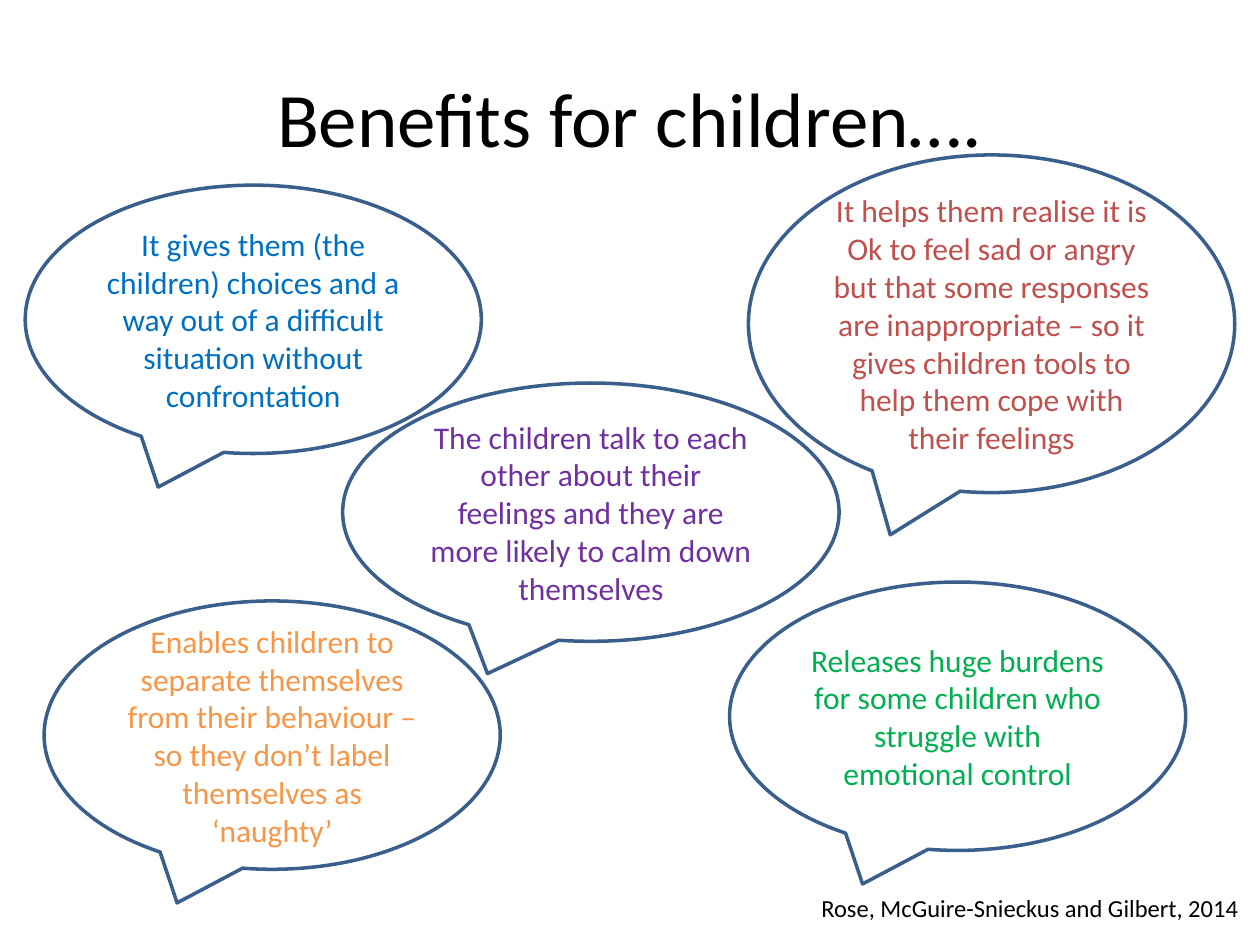
import pptx
import pptx.dml.color
import pptx.enum.shapes
import pptx.enum.text
import pptx.util
from pptx.util import Inches

RGBColor = pptx.dml.color.RGBColor
BLACK = RGBColor(0x00, 0x00, 0x00)
OUTLINE = RGBColor(0x3A, 0x5F, 0x8C)
ORANGE = RGBColor(0xF7, 0x96, 0x46)
RED = RGBColor(0xC0, 0x50, 0x4D)
BLUE = RGBColor(0x00, 0x70, 0xC0)
PURPLE = RGBColor(0x70, 0x30, 0xA0)
GREEN = RGBColor(0x00, 0xB0, 0x50)

CENTER = pptx.enum.text.PP_ALIGN.CENTER
LEFT = pptx.enum.text.PP_ALIGN.LEFT
MIDDLE = pptx.enum.text.MSO_ANCHOR.MIDDLE
TOP = pptx.enum.text.MSO_ANCHOR.TOP

BENEFITS = [
    (0.35, 4.77, 3.62, 2.13, ORANGE,
     "Enables children to separate themselves from their behaviour – "
     "so they don’t label themselves as ‘naughty’"),
    (5.94, 1.23, 3.86, 2.68, RED,
     "It helps them realise it is Ok to feel sad or angry but that some "
     "responses are inappropriate – so it gives children tools to help "
     "them cope with their feelings"),
    (0.2, 1.47, 3.62, 2.13, BLUE,
     "It gives them (the children) choices and a way out of a difficult "
     "situation without confrontation"),
    (2.72, 3.04, 3.94, 2.05, PURPLE,
     "The children talk to each other about their feelings and they are "
     "more likely to calm down themselves"),
    (5.79, 4.62, 3.62, 2.13, GREEN,
     "Releases huge burdens for some children who struggle with "
     "emotional control"),
]


def write_text(shape, text, size, color, alignment=CENTER, anchor=MIDDLE):
    """Fill a shape with one wrapped paragraph."""
    frame = shape.text_frame
    frame.word_wrap = True
    frame.vertical_anchor = anchor
    paragraph = frame.paragraphs[0]
    paragraph.alignment = alignment
    run = paragraph.add_run()
    run.text = text
    run.font.name = "Calibri"
    run.font.size = pptx.util.Pt(size)
    run.font.color.rgb = color


def add_label(slide, left, top, width, height, text, size, **layout):
    """Add a black text box."""
    box = slide.shapes.add_textbox(
        Inches(left), Inches(top), Inches(width), Inches(height))
    write_text(box, text, size, BLACK, **layout)


def add_bubble(slide, left, top, width, height, color, text):
    """Add an outlined speech bubble with coloured text."""
    bubble = slide.shapes.add_shape(
        pptx.enum.shapes.MSO_SHAPE.OVAL_CALLOUT,
        Inches(left), Inches(top), Inches(width), Inches(height))
    bubble.shadow.inherit = False
    bubble.fill.background()
    bubble.line.color.rgb = OUTLINE
    bubble.line.width = pptx.util.Pt(2)
    write_text(bubble, text, 18, color)


def main():
    """Build and save the slide."""
    presentation = pptx.Presentation()
    presentation.slide_width = Inches(10)
    presentation.slide_height = Inches(7.5)
    slide = presentation.slides.add_slide(presentation.slide_layouts[6])
    add_label(slide, 0.5, 0.3, 9, 1.25, "Benefits for children….", 44)
    for benefit in BENEFITS:
        add_bubble(slide, *benefit)
    add_label(slide, 6.42, 7.04, 3.94, 0.34,
              "Rose, McGuire-Snieckus and Gilbert, 2014", 14,
              alignment=LEFT, anchor=TOP)
    presentation.save("out.pptx")


if __name__ == "__main__":
    main()
